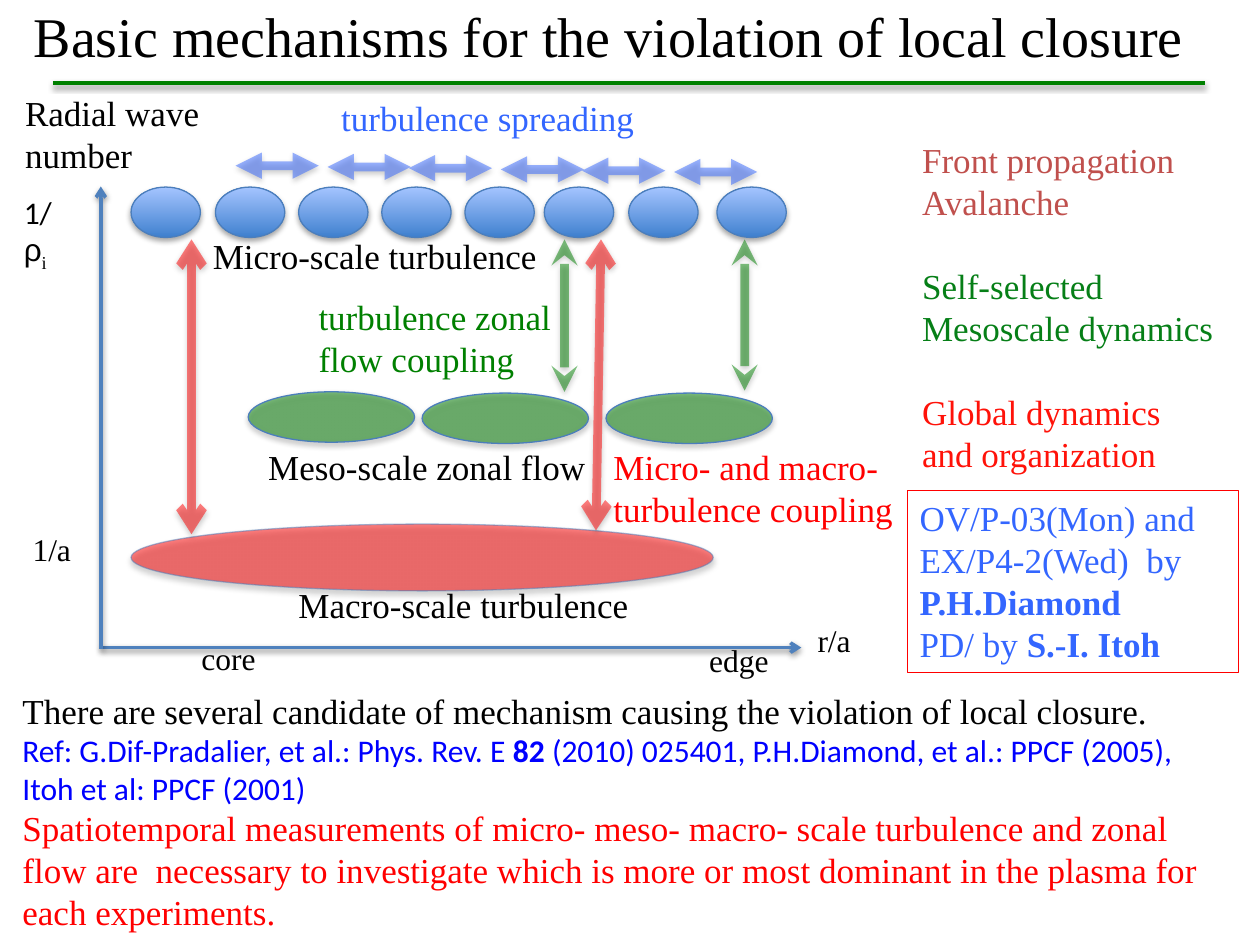
from lxml import etree
from pptx import Presentation
from pptx import util as u
from pptx.dml.color import RGBColor
from pptx.enum import shapes, text
from pptx.oxml import ns

# Grid: 100 columns by 75 rows, so one cell is a tenth of an inch
COLUMNS, ROWS = 100, 75
CELL = u.Inches(0.1)
COLORS = {
    "black": "000000", "axis": "4F81BD", "outline": "4B7EBC", "red": "FF0000",
    "green": "008000", "blue": "3366FF", "reference": "0000FF", "front": "C0504D",
    "meso": "067F17", "global": "FF1209", "deep": "3F80CE", "pale": "A4C4FF",
}
SERIF, SANS, GREEK = "Times New Roman", "Calibri", "Arial"

# Ellipses: fill, opacity, (column, row, width, height)
MICRO_COLUMNS = [10.4, 17.1, 23.7, 30.3, 36.9, 43.2, 49.9, 56.9]
ELLIPSES = [("red", 50, (10.4, 41.6, 46.2, 5.3))]
ELLIPSES += [("green", 50, (column, row, 13.2, 4))
             for column, row in [(19.7, 31.1), (33.5, 31.2), (48.1, 31.2)]]
ELLIPSES += [("gradient", 100, (column, 14.85, 5.5, 4)) for column in MICRO_COLUMNS]

# Lines: color, points wide, opacity, head, tail, (from column, row, to column, row)
LINES = [
    ("green", 2, 100, None, None, (4.2, 6.6, 95.6, 6.6)),
    ("axis", 2, 100, None, "arrow", (8, 51.4, 63.6, 51.4)),
    ("axis", 2, 100, None, "arrow", (8, 51.5, 8, 14.8)),
    ("red", 5, 50, "arrow", "arrow", (15.2, 19, 15.2, 42.4)),
    ("red", 5, 50, "arrow", "arrow", (47.7, 19, 47.3, 42.1)),
    ("green", 5, 50, "stealth", "stealth", (44.8, 19, 44.8, 31.1)),
    ("green", 5, 50, "stealth", "stealth", (59.1, 19, 59.1, 31)),
]
# Spreading arrows come in pairs that step slowly downwards
for index in range(6):
    start = 18.7 + 13.75 * (index // 2) + 7.3 * (index % 2)
    level = 13.15 + 0.1 * index
    LINES.append(("blue", 5, 50, "triangle", "triangle",
                  (start + 6.6, level, start, level)))

# Labels: text, color, size, wrapped, (column, row, width, height)
LABELS = [
    ("Radial wave number", "black", 20, True, (1, 6.8, 16.1, 7.7)),
    ("1/a", "black", 18, False, (1.6, 41.6, 5.1, 4)),
    ("Macro-scale turbulence", "black", 20, False, (22.7, 45.8, 28.9, 4.4)),
    ("Meso-scale zonal flow", "black", 20, False, (20.3, 34.9, 27.5, 4.4)),
    ("Micro-scale turbulence", "black", 20, False, (15.9, 18.1, 28.2, 4.4)),
    ("Micro- and macro- turbulence coupling", "red", 20, True, (47.7, 34.9, 26.5, 7.7)),
    ("turbulence zonal flow coupling", "green", 20, True, (24.3, 23, 22, 7.7)),
    ("turbulence spreading", "blue", 20, False, (26.1, 7.2, 26.2, 4.4)),
    ("r/a", "black", 18, True, (63.9, 48.8, 7.7, 4)),
    ("edge", "black", 18, True, (55.3, 50.4, 7.7, 4)),
    ("core", "black", 18, True, (15, 50.2, 7.7, 4)),
]

# Rich text: a paragraph is (color, size, font, points before, spans)
TITLE = [("black", 32, SERIF, 0,
          [("Basic mechanisms for the violation of local closure", {})])]
MICRO_TICK = [("black", 18, SANS, 0,
               [("1/", {}), ("ρ", {"name": GREEK}), ("i", {"name": SERIF, "sub": True})])]
SUMMARY = [
    ("black", 20, SERIF, 0, [("There are several candidate of mechanism causing "
                              "the violation of local closure.", {})]),
    ("reference", 18, SANS, 0, [
        ("Ref: G.Dif-Pradalier, et al.: Phys. Rev. E ", {}), ("82", {"bold": True}),
        (" (2010) 025401, P.H.Diamond, et al.: PPCF (2005),", {})]),
    ("reference", 18, SANS, 0, [("Itoh et al: PPCF (2001)", {})]),
    ("red", 20, SERIF, 0, [(
        "Spatiotemporal measurements of micro- meso- macro- scale turbulence and zonal "
        "flow are  necessary to investigate which is more or most dominant in the plasma "
        "for each experiments.", {})]),
]
DYNAMICS = [(color, 20, SERIF, before, [(words, {})]) for color, before, words in [
    ("front", 0, "Front propagation"), ("front", 0, "Avalanche"),
    ("meso", 24, "Self-selected"), ("meso", 0, "Mesoscale dynamics"),
    ("global", 24, "Global dynamics"), ("global", 0, "and organization"),
]]
TALKS = [
    ("blue", 20, SERIF, 0, [("OV/P-03(Mon) and EX/P4-2(Wed)  by ", {}),
                            ("P.H.Diamond", {"bold": True})]),
    ("blue", 20, SERIF, 0, [("PD/ by ", {}), ("S.-I. Itoh", {"bold": True})]),
]


def cells(values):
    return [int(value * CELL) for value in values]


def rgb(name):
    return RGBColor.from_string(COLORS[name])


def add_xml(parent, tag, **values):
    return etree.SubElement(parent, ns.qn(tag), values)


def set_opacity(fill_parent, percent):
    if percent < 100:
        color = fill_parent.find(ns.qn("a:solidFill"))[0]
        add_xml(color, "a:alpha", val=str(percent * 1000))


def add_shadow(item, distance, percent):
    effects = add_xml(item._element.spPr, "a:effectLst")
    shadow = add_xml(effects, "a:outerShdw", blurRad="40000", dist=str(distance),
                     dir="5400000", rotWithShape="0")
    color = add_xml(shadow, "a:srgbClr", val=COLORS["black"])
    add_xml(color, "a:alpha", val=str(percent * 1000))


def add_ellipse(page, fill, opacity, area):
    ellipse = page.shapes.add_shape(shapes.MSO_SHAPE.OVAL, *cells(area))
    if fill == "gradient":
        ellipse.fill.gradient()
        ellipse.fill.gradient_angle = 90
        for stop, name, position in zip(ellipse.fill.gradient_stops,
                                        ("deep", "pale"), (0, 1)):
            stop.color.rgb, stop.position = rgb(name), position
    else:
        ellipse.fill.solid()
        ellipse.fill.fore_color.rgb = rgb(fill)
        set_opacity(ellipse._element.spPr, opacity)
    ellipse.line.color.rgb = rgb("outline")
    ellipse.line.width = u.Pt(0.75)
    if fill == "red":
        set_opacity(ellipse.line._get_or_add_ln(), opacity)
    add_shadow(ellipse, 23000, 35)


def add_line(page, color, width, opacity, head, tail, ends):
    line = page.shapes.add_connector(shapes.MSO_CONNECTOR.STRAIGHT, *cells(ends))
    line.line.color.rgb = rgb(color)
    line.line.width = u.Pt(width)
    outline = line.line._get_or_add_ln()
    set_opacity(outline, opacity)
    for tag, kind in (("a:headEnd", head), ("a:tailEnd", tail)):
        if kind:
            add_xml(outline, tag, type=kind)
    add_shadow(line, 20000, 38)


def add_text(page, paragraphs, area, align="LEFT", anchor="TOP", wrap=True, border=None):
    box = page.shapes.add_textbox(*cells(area))
    frame = box.text_frame
    frame.word_wrap = wrap
    frame.vertical_anchor = getattr(text.MSO_ANCHOR, anchor)
    if border:
        box.line.color.rgb = rgb(border)
        box.line.width = u.Pt(0.75)
    for index, (color, size, font, before, spans) in enumerate(paragraphs):
        para = frame.add_paragraph() if index else frame.paragraphs[0]
        para.alignment = getattr(text.PP_ALIGN, align)
        para.space_before = u.Pt(before)
        for words, changes in spans:
            span = para.add_run()
            span.text = words
            span.font.color.rgb = rgb(color)
            formats = {"name": font, "size": u.Pt(size), "bold": False, **changes}
            if formats.pop("sub", False):
                span.font._element.set("baseline", "-25000")
            for name, value in formats.items():
                setattr(span.font, name, value)


def main():
    deck = Presentation()
    deck.slide_width, deck.slide_height = COLUMNS * CELL, ROWS * CELL
    page = deck.slides.add_slide(deck.slide_layouts[6])

    # Diagram
    for ellipse in ELLIPSES:
        add_ellipse(page, *ellipse)
    for line in LINES:
        add_line(page, *line)
    for words, color, size, wrap, area in LABELS:
        add_text(page, [(color, size, SERIF, 0, [(words, {})])], area, wrap=wrap)
    add_text(page, MICRO_TICK, (0.9, 14.8, 5.9, 4))

    # Title, side column and summary
    add_text(page, TITLE, (1.7, -1.2, 93.3, 7.9), align="CENTER", anchor="MIDDLE")
    add_text(page, DYNAMICS, (72.2, 10.5, 26.7, 27.9))
    add_text(page, TALKS, (72, 38.9, 26.3, 14.5), border="red")
    add_text(page, SUMMARY, (0.8, 54.2, 98.4, 20.5))

    deck.save("out.pptx")


if __name__ == "__main__":
    main()
